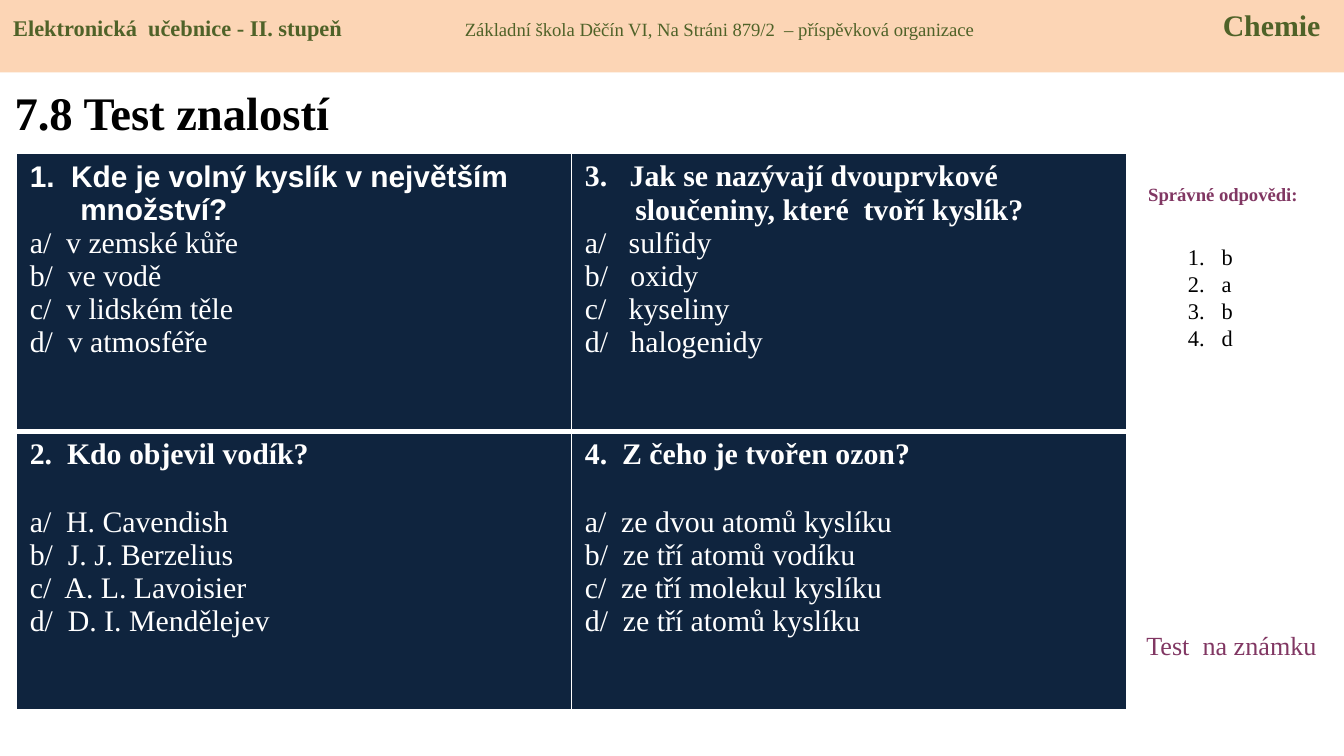
from lxml import etree
from pptx import Presentation
from pptx.dml.color import RGBColor
from pptx.enum import shapes, text
from pptx.oxml import ns
from pptx.util import Pt

COLORS = {
    "white": "FFFFFF",
    "black": "000000",
    "navy": "0F243E",
    "peach": "FCD5B5",
    "green": "4F6228",
    "plum": "813763",
}
SERIF, SANS = "Times New Roman", "Arial"
HANG = 27
LINE_16PT = 18.4

# Each question: heading, options, heading font, hanging indent, gap under heading
QUESTIONS = [
    [("1.  Kde je volný kyslík v největším množství?",
      ["a/  v zemské kůře", "b/  ve vodě", "c/  v lidském těle", "d/  v atmosféře"],
      SANS, HANG, 0),
     ("3.   Jak se nazývají dvouprvkové sloučeniny, které  tvoří kyslík?",
      ["a/   sulfidy", "b/   oxidy", "c/   kyseliny", "d/   halogenidy"],
      SERIF, HANG, 0)],
    [("2.  Kdo objevil vodík?",
      ["a/  H. Cavendish", "b/  J. J. Berzelius", "c/  A. L. Lavoisier",
       "d/  D. I. Mendělejev"],
      SERIF, HANG, LINE_16PT),
     ("4.  Z čeho je tvořen ozon?",
      ["a/  ze dvou atomů kyslíku", "b/  ze tří atomů vodíku",
       "c/  ze tří molekul kyslíku", "d/  ze tří atomů kyslíku"],
      SERIF, 0, LINE_16PT)],
]


def rgb(name):
    return RGBColor.from_string(COLORS[name])


def sub(parent, tag, **attrs):
    el = etree.SubElement(parent, ns.qn(tag))
    for key, value in attrs.items():
        el.set(key, str(value))
    return el


def add_run(p, content, size, color, bold=False, font=SERIF):
    r = p.add_run()
    r.text = content
    r.font.name, r.font.size, r.font.bold = font, Pt(size), bold
    r.font.color.rgb = rgb(color)


def add_text(tf, content, first=False, align=text.PP_ALIGN.LEFT, hang=0,
             before=0, numbered=False, **run_format):
    """Write one paragraph; first=True fills the paragraph already there."""
    p = tf.paragraphs[0] if first else tf.add_paragraph()
    p.alignment = align
    if before:
        p.space_before = Pt(before)
    pPr = p._p.get_or_add_pPr()
    if hang:
        pPr.set("marL", str(Pt(hang)))
        pPr.set("indent", str(-Pt(hang)))
    if numbered:
        sub(pPr, "a:buFont", typeface="+mj-lt")
        sub(pPr, "a:buAutoNum", type="arabicPeriod")
    add_run(p, content, **run_format)


def add_box(s, left, top, width, height):
    tf = s.shapes.add_textbox(Pt(left), Pt(top), Pt(width), Pt(height)).text_frame
    tf.word_wrap = True
    return tf


def set_borders(cell, bottom):
    tcPr = cell._tc.get_or_add_tcPr()
    for side, width in (("L", 1), ("R", 1), ("T", 1), ("B", bottom)):
        ln = sub(tcPr, "a:ln" + side, w=Pt(width))
        sub(sub(ln, "a:solidFill"), "a:srgbClr", val=COLORS["white"])


def add_question(cell, heading, options, font, hang, gap):
    tf = cell.text_frame
    add_text(tf, heading, first=True, hang=hang, size=16, color="white",
             bold=True, font=font)
    for i, option in enumerate(options):
        add_text(tf, option, hang=HANG if hang else 0, before=0 if i else gap,
                 size=16, color="white")


def add_questions(s):
    frame = s.shapes.add_table(2, 2, Pt(8.8), Pt(82.2), Pt(594.8), Pt(298))
    table = frame.table
    table.first_row = table.horz_banding = False
    for col in table.columns:
        col.width = Pt(297.4)
    for i, row in enumerate(QUESTIONS):
        table.rows[i].height = Pt(149)
        for j, question in enumerate(row):
            cell = table.cell(i, j)
            set_borders(cell, bottom=1 if i else 3)
            cell.fill.solid()
            cell.fill.fore_color.rgb = rgb("navy")
            add_question(cell, *question)


def add_answers(s):
    tf = add_box(s, 604, 94.3, 102.2, 19.4)
    add_text(tf, "Správné odpovědi:", first=True, align=text.PP_ALIGN.CENTER,
             size=10, color="plum", bold=True)
    tf = add_box(s, 629.3, 113, 39.6, 94.3)
    tf.margin_top = Pt(17.4)
    for i, answer in enumerate("babd"):
        add_text(tf, answer, first=i == 0, hang=18, numbered=True,
                 size=12, color="black")


def add_header(s):
    sp = s.shapes.add_shape(shapes.MSO_SHAPE.RECTANGLE, 0, 0, Pt(720), Pt(38.8))
    sp.shadow.inherit = False
    sp.fill.solid()
    sp.fill.fore_color.rgb = rgb("peach")
    sp.line.fill.background()
    tf = sp.text_frame
    tf.vertical_anchor = text.MSO_ANCHOR.TOP
    p = tf.paragraphs[0]
    p.alignment = text.PP_ALIGN.LEFT
    tabs = sub(p._p.get_or_add_pPr(), "a:tabLst")
    for stop in (242, 648):
        sub(tabs, "a:tab", pos=Pt(stop), algn="l")
    add_run(p, "Elektronická  učebnice - II. stupeň\t", 12, "green", bold=True)
    add_run(p, "Základní škola Děčín VI, Na Stráni 879/2  – příspěvková organizace\t",
            10, "green")
    add_run(p, "Chemie", 16, "green", bold=True)


def main():
    prs = Presentation()
    prs.slide_width, prs.slide_height = Pt(720), Pt(405)
    s = prs.slides.add_slide(prs.slide_layouts[6])

    tf = add_box(s, 0.7, 38.9, 229.7, 42.5)
    tf.vertical_anchor = text.MSO_ANCHOR.MIDDLE
    add_text(tf, "7.8 Test znalostí", first=True, size=25, color="black", bold=True)

    add_questions(s)
    add_answers(s)
    add_text(add_box(s, 607, 333.4, 113, 24.5), "Test  na známku", first=True,
             size=14, color="plum")
    add_header(s)
    prs.save("out.pptx")


if __name__ == "__main__":
    main()
